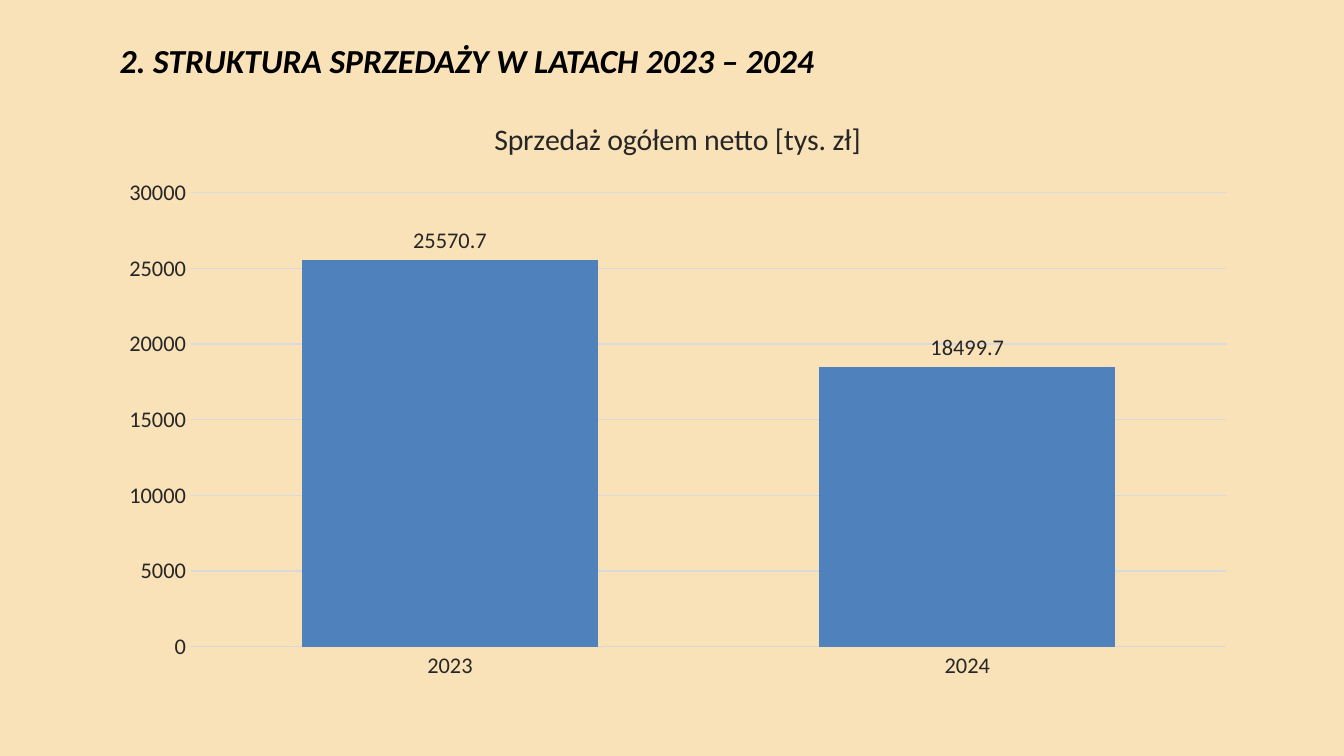
from pptx import Presentation
from pptx.chart.data import CategoryChartData
from pptx.dml.color import RGBColor
from pptx.enum.chart import XL_CHART_TYPE, XL_LABEL_POSITION, XL_TICK_MARK
from pptx.enum.text import MSO_ANCHOR
from pptx.util import Pt

FONT = "Calibri"
INK = "262626"
GRID = "D9D9D9"
BAR = "4F81BD"


def rgb(value):
    return RGBColor.from_string(value)


def style_font(font, size, color=INK, bold=False, italic=False):
    font.name = FONT
    font.size = Pt(size)
    font.bold = bold
    font.italic = italic
    font.color.rgb = rgb(color)


def style_line(line):
    line.color.rgb = rgb(GRID)
    line.width = Pt(0.75)


def add_heading(page, left, top, width, height):
    box = page.shapes.add_textbox(Pt(left), Pt(top), Pt(width), Pt(height))
    frame = box.text_frame
    frame.word_wrap = True
    frame.vertical_anchor = MSO_ANCHOR.MIDDLE
    frame.text = "2. STRUKTURA SPRZEDAŻY W LATACH 2023 – 2024"
    style_font(frame.paragraphs[0].runs[0].font, 18, "000000", bold=True, italic=True)


def add_sales_chart(page, left, top, width, height):
    data = CategoryChartData()
    data.categories = ["2023", "2024"]
    data.add_series("Sprzedaż", [25570.7, 18499.7])
    chart = page.shapes.add_chart(
        XL_CHART_TYPE.COLUMN_CLUSTERED, Pt(left), Pt(top), Pt(width), Pt(height), data
    ).chart
    style_font(chart.font, 10, "000000")
    chart.has_legend = False
    chart.has_title = True
    title = chart.chart_title.text_frame
    title.text = "Sprzedaż ogółem netto [tys. zł]"
    style_font(title.paragraphs[0].runs[0].font, 16)

    for axis in (chart.category_axis, chart.value_axis):
        axis.major_tick_mark = XL_TICK_MARK.NONE
        axis.minor_tick_mark = XL_TICK_MARK.NONE
        style_font(axis.tick_labels.font, 12)
    style_line(chart.category_axis.format.line)
    value_axis = chart.value_axis
    value_axis.minimum_scale = 0
    value_axis.maximum_scale = 30000
    value_axis.major_unit = 5000
    value_axis.format.line.fill.background()
    style_line(value_axis.major_gridlines.format.line)

    plot = chart.plots[0]
    plot.gap_width = 75
    plot.overlap = 40
    plot.vary_by_categories = False
    series = plot.series[0]
    series.format.fill.solid()
    series.format.fill.fore_color.rgb = rgb(BAR)
    labels = series.data_labels
    labels.show_value = True
    labels.position = XL_LABEL_POSITION.OUTSIDE_END
    style_font(labels.font, 12)


def main():
    deck = Presentation()
    deck.slide_width, deck.slide_height = Pt(720), Pt(405)
    page = deck.slides.add_slide(deck.slide_layouts[6])
    page.background.fill.solid()
    page.background.fill.fore_color.rgb = rgb("FAE2B8")
    add_heading(page, 57, 15, 612, 34)
    add_sales_chart(page, 57, 50.4, 612, 319.6)
    deck.save("out.pptx")


if __name__ == "__main__":
    main()
